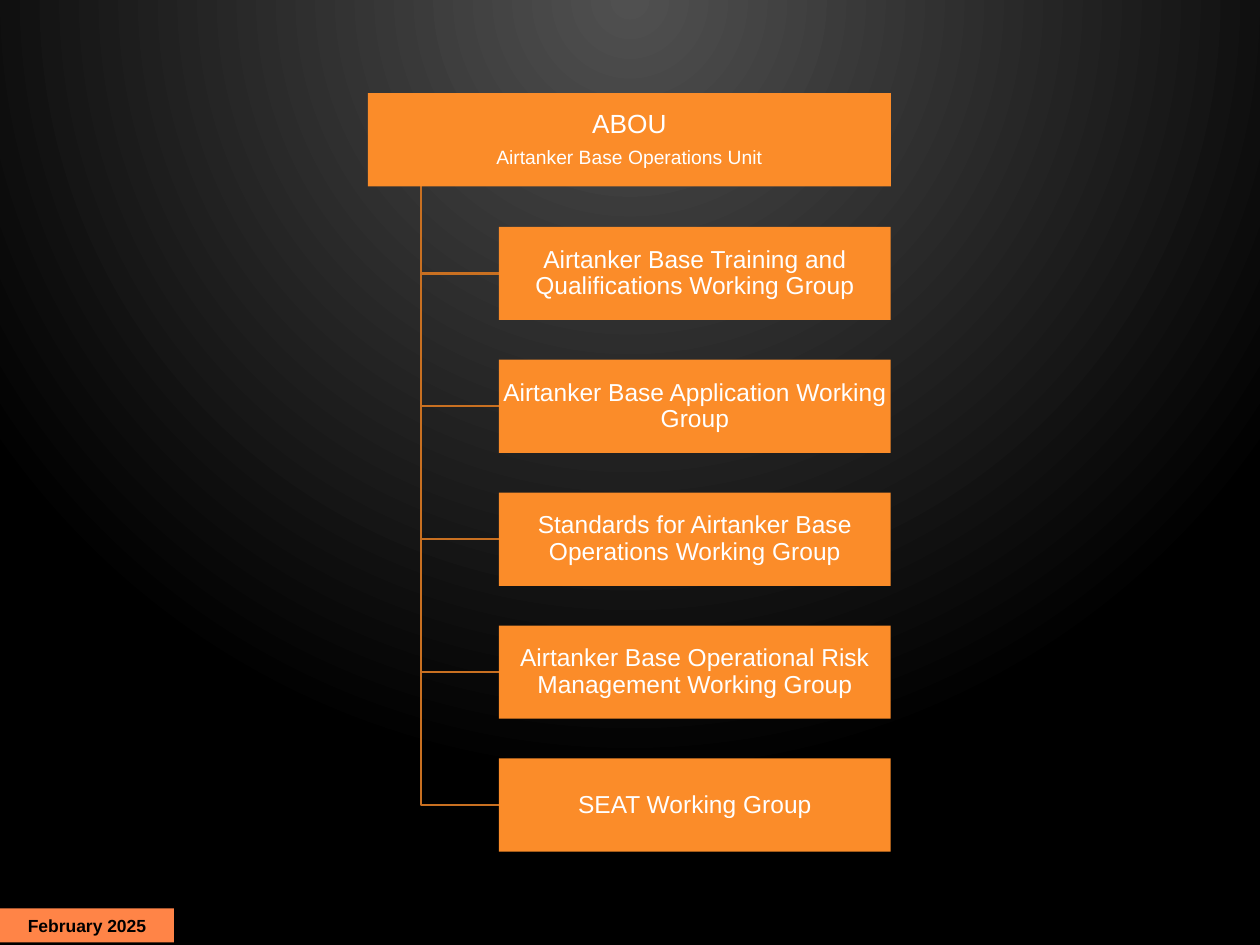
import pptx
import pptx.util
import pptx.enum.shapes
import pptx.enum.text
import pptx.dml.color
import pptx.oxml
import pptx.oxml.ns
from pptx.util import Inches

COLORS = {
    "glow": "505050",
    "dark": "000000",
    "box": "FB8C29",
    "line": "C97021",
    "date": "FF8447",
    "light": "FFFFFF",
}
FONT = "Arial"
GROUPS = [
    "Airtanker Base Training and Qualifications Working Group",
    "Airtanker Base Application Working Group",
    "Standards for Airtanker Base Operations Working Group",
    "Airtanker Base Operational Risk Management Working Group",
    "SEAT Working Group",
]
HIGH = 0.74
HEAD_LEFT, HEAD_TOP, HEAD_WIDE = 2.92, 0.74, 4.15
ITEM_LEFT, ITEM_TOP, ITEM_WIDE = 3.96, 1.8, 3.11
STEP = 4.22 / 4
TRUNK = 3.34


def get_color(name):
    return pptx.dml.color.RGBColor.from_string(COLORS[name])


def paint_back(slide):
    fill = slide.background.fill
    fill.gradient()
    for stop, name in zip(fill.gradient_stops, ("glow", "dark")):
        stop.color.rgb = get_color(name)
    linear = slide.element.find(".//" + pptx.oxml.ns.qn("a:lin"))
    radial = pptx.oxml.parse_xml(
        f'<a:path {pptx.oxml.ns.nsdecls("a")} path="circle">'
        '<a:fillToRect l="43000" t="0" r="43000" b="100000"/></a:path>'
    )
    linear.getparent().replace(linear, radial)


def add_box(slide, left, top, wide, high, fill, lines, ink="light",
            bold=False, inset=0.01, pitch=0.9):
    box = slide.shapes.add_shape(
        pptx.enum.shapes.MSO_SHAPE.RECTANGLE,
        Inches(left), Inches(top), Inches(wide), Inches(high),
    )
    box.shadow.inherit = False
    box.fill.solid()
    box.fill.fore_color.rgb = get_color(fill)
    box.line.fill.background()
    frame = box.text_frame
    frame.word_wrap = True
    frame.vertical_anchor = pptx.enum.text.MSO_ANCHOR.MIDDLE
    frame.margin_left = frame.margin_right = Inches(inset)
    frame.margin_top = frame.margin_bottom = Inches(0.01)
    frame.text = "\n".join(text for text, size in lines)
    for para, (text, size) in zip(frame.paragraphs, lines):
        para.alignment = pptx.enum.text.PP_ALIGN.CENTER
        para.line_spacing = pitch
        font = para.runs[0].font
        font.name = FONT
        font.size = pptx.util.Pt(size)
        font.bold = bold
        font.color.rgb = get_color(ink)
    for para in frame.paragraphs[:-1]:
        para.space_after = pptx.util.Pt(5)


def add_branch(slide, level):
    start = HEAD_TOP + HIGH
    pen = slide.shapes.build_freeform(Inches(TRUNK), Inches(start))
    pen.add_line_segments(
        [(Inches(TRUNK), Inches(level)), (Inches(ITEM_LEFT), Inches(level))],
        close=False,
    )
    branch = pen.convert_to_shape()
    branch.shadow.inherit = False
    branch.fill.background()
    branch.line.color.rgb = get_color("line")
    branch.line.width = pptx.util.Pt(1.25)


def main():
    deck = pptx.Presentation()
    deck.slide_width, deck.slide_height = Inches(10), Inches(7.5)
    slide = deck.slides.add_slide(deck.slide_layouts[6])
    paint_back(slide)
    tops = [ITEM_TOP + i * STEP for i in range(len(GROUPS))]
    for top in reversed(tops):
        add_branch(slide, top + HIGH / 2)
    add_box(slide, HEAD_LEFT, HEAD_TOP, HEAD_WIDE, HIGH, "box",
            [("ABOU", 15), ("Airtanker Base Operations Unit", 11)])
    for top, name in zip(tops, GROUPS):
        add_box(slide, ITEM_LEFT, top, ITEM_WIDE, HIGH, "box", [(name, 14)])
    add_box(slide, 0, 7.21, 1.38, 0.27, "date", [("February 2025", 10)],
            ink="dark", bold=True, inset=0.1, pitch=1.0)
    deck.save("out.pptx")


if __name__ == "__main__":
    main()
